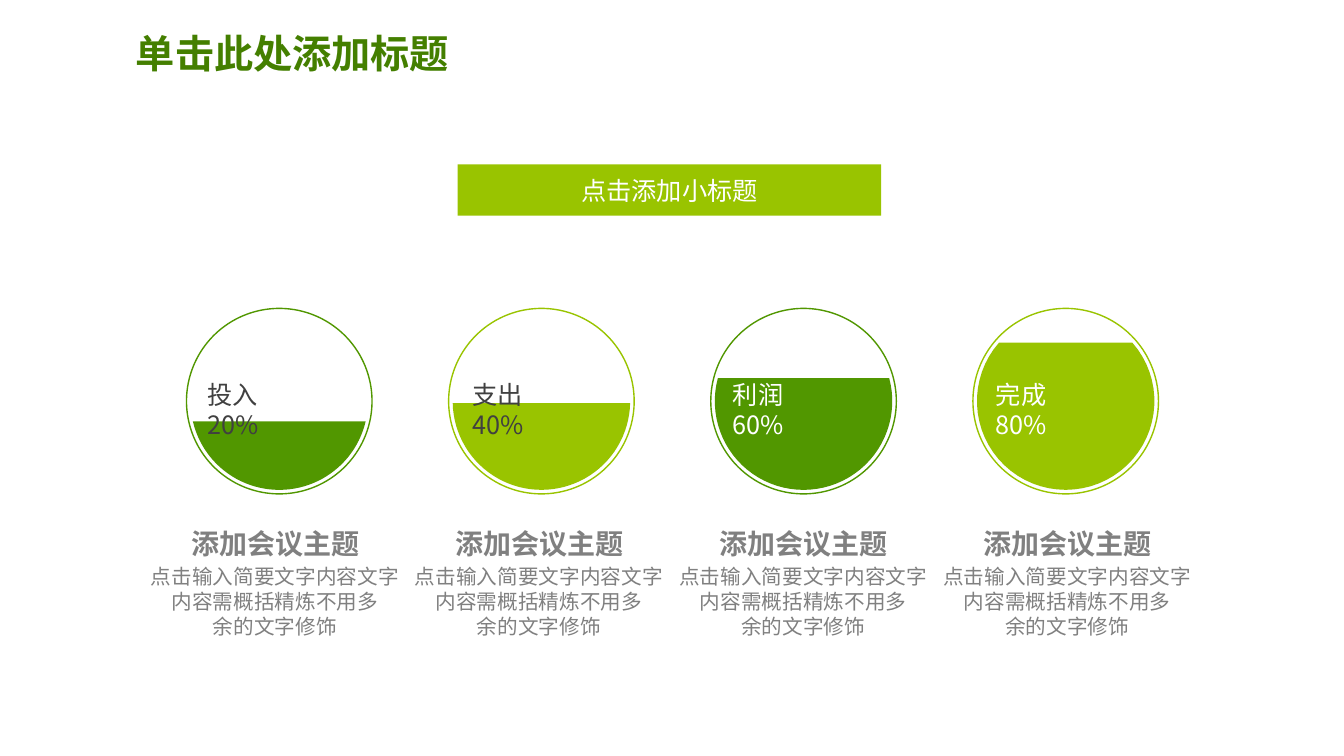
import math
from dataclasses import dataclass

import lxml.etree
import pptx
import pptx.dml.color
import pptx.enum.shapes
import pptx.enum.text
import pptx.oxml.ns
import pptx.shapes.base
import pptx.slide
import pptx.text.text
import pptx.util

Inches = pptx.util.Inches
RGBColor = pptx.dml.color.RGBColor
Align = pptx.enum.text.PP_ALIGN
Anchor = pptx.enum.text.MSO_ANCHOR
Preset = pptx.enum.shapes.MSO_SHAPE

WHITE = RGBColor(0xFF, 0xFF, 0xFF)
LIME = RGBColor(0x99, 0xC4, 0x00)
GREEN = RGBColor(0x51, 0x97, 0x00)
TITLE_GREEN = RGBColor(0x44, 0x7F, 0x00)
DARK_GRAY = RGBColor(0x40, 0x40, 0x40)
GRAY = RGBColor(0x80, 0x80, 0x80)

CJK_FONT = "Noto Sans CJK SC"
TITLE_FONT = "Montserrat"
LINE_HEIGHT = 1.2

# Gauge geometry, in inches
RING_LEFT, RING_TOP, RING_SIZE, RING_STEP = 1.85, 3.06, 1.84, 2.6
LIQUID_RADIUS = 0.88
ARC_STEPS = 48
THEME_STEP = 2.62

THEME_HEADING = "添加会议主题"
THEME_LINES = ["点击输入简要文字内容文字", "内容需概括精炼不用多", "余的文字修饰"]


@dataclass
class Style:
    size: float
    color: RGBColor
    align: Align = Align.LEFT
    bold: bool = False
    font: str = CJK_FONT


@dataclass
class Gauge:
    label: str
    percent: str
    color: RGBColor
    text_color: RGBColor
    level: float
    label_left: float


GAUGES = [
    Gauge("投入", "20%", GREEN, DARK_GRAY, 4.18, 1.96),
    Gauge("支出", "40%", LIME, DARK_GRAY, 4.0, 4.59),
    Gauge("利润", "60%", GREEN, WHITE, 3.75, 7.17),
    Gauge("完成", "80%", LIME, WHITE, 3.4, 9.78),
]


def write(frame: pptx.text.text.TextFrame, lines: list[str], style: Style) -> None:
    frame.word_wrap = True
    for index, line in enumerate(lines):
        paragraph = frame.add_paragraph() if index else frame.paragraphs[0]
        paragraph.text = line
        paragraph.alignment = style.align
        paragraph.line_spacing = pptx.util.Pt(round(style.size * LINE_HEIGHT, 1))
        paragraph.font.name = style.font
        paragraph.font.size = pptx.util.Pt(style.size)
        paragraph.font.bold = style.bold
        paragraph.font.color.rgb = style.color
        # East Asian typeface
        properties = paragraph._p.pPr.find(pptx.oxml.ns.qn("a:defRPr"))
        east_asian = lxml.etree.SubElement(properties, pptx.oxml.ns.qn("a:ea"))
        east_asian.set("typeface", CJK_FONT)


def add_text(slide: pptx.slide.Slide, left: float, top: float, width: float,
             height: float, lines: list[str], style: Style,
             anchor: Anchor = Anchor.TOP) -> None:
    box = slide.shapes.add_textbox(Inches(left), Inches(top), Inches(width), Inches(height))
    box.text_frame.vertical_anchor = anchor
    write(box.text_frame, lines, style)


def paint(shape: pptx.shapes.base.BaseShape, fill: RGBColor,
          line: RGBColor | None = None) -> None:
    shape.shadow.inherit = False
    shape.fill.solid()
    shape.fill.fore_color.rgb = fill
    if line is None:
        shape.line.fill.background()
    else:
        shape.line.color.rgb = line
        shape.line.width = pptx.util.Pt(1)


def add_gauge(slide: pptx.slide.Slide, gauge: Gauge, left: float) -> None:
    ring = slide.shapes.add_shape(
        Preset.OVAL, Inches(left), Inches(RING_TOP), Inches(RING_SIZE), Inches(RING_SIZE))
    paint(ring, WHITE, gauge.color)

    # Liquid: the part of the inner disc below the level
    center_x = left + RING_SIZE / 2
    center_y = RING_TOP + RING_SIZE / 2
    start = math.asin((gauge.level - center_y) / LIQUID_RADIUS)
    sweep = math.pi - 2 * start
    angles = [start + sweep * step / ARC_STEPS for step in range(ARC_STEPS + 1)]
    points = [(Inches(center_x + LIQUID_RADIUS * math.cos(angle)),
               Inches(center_y + LIQUID_RADIUS * math.sin(angle))) for angle in angles]
    builder = slide.shapes.build_freeform(*points[0])
    builder.add_line_segments(points[1:], close=True)
    paint(builder.convert_to_shape(), gauge.color)

    add_text(slide, gauge.label_left, 3.71, 1.23, 0.7,
             [f"{gauge.label}\v{gauge.percent}"], Style(18, gauge.text_color))


def add_theme(slide: pptx.slide.Slide, offset: float) -> None:
    add_text(slide, 1.62 + offset, 5.17, 2.22, 0.39, [THEME_HEADING],
             Style(20, GRAY, Align.CENTER, bold=True))
    add_text(slide, 1.18 + offset, 5.55, 3.09, 0.62, THEME_LINES,
             Style(14.7, GRAY, Align.CENTER))


def main() -> None:
    presentation = pptx.Presentation()
    presentation.slide_width = Inches(13.33)
    presentation.slide_height = Inches(7.5)
    slide = presentation.slides.add_slide(presentation.slide_layouts[6])

    # Title and banner
    add_text(slide, 1.25, 0.1, 11.5, 0.85, ["单击此处添加标题"],
             Style(28, TITLE_GREEN, bold=True, font=TITLE_FONT), Anchor.MIDDLE)
    banner = slide.shapes.add_shape(
        Preset.RECTANGLE, Inches(4.54), Inches(1.63), Inches(4.2), Inches(0.51))
    paint(banner, LIME)
    banner.text_frame.vertical_anchor = Anchor.MIDDLE
    write(banner.text_frame, ["点击添加小标题"], Style(18, WHITE, Align.CENTER))

    # Gauges with their themes
    for index, gauge in enumerate(GAUGES):
        add_gauge(slide, gauge, RING_LEFT + index * RING_STEP)
        add_theme(slide, index * THEME_STEP)

    presentation.save("out.pptx")


if __name__ == "__main__":
    main()
